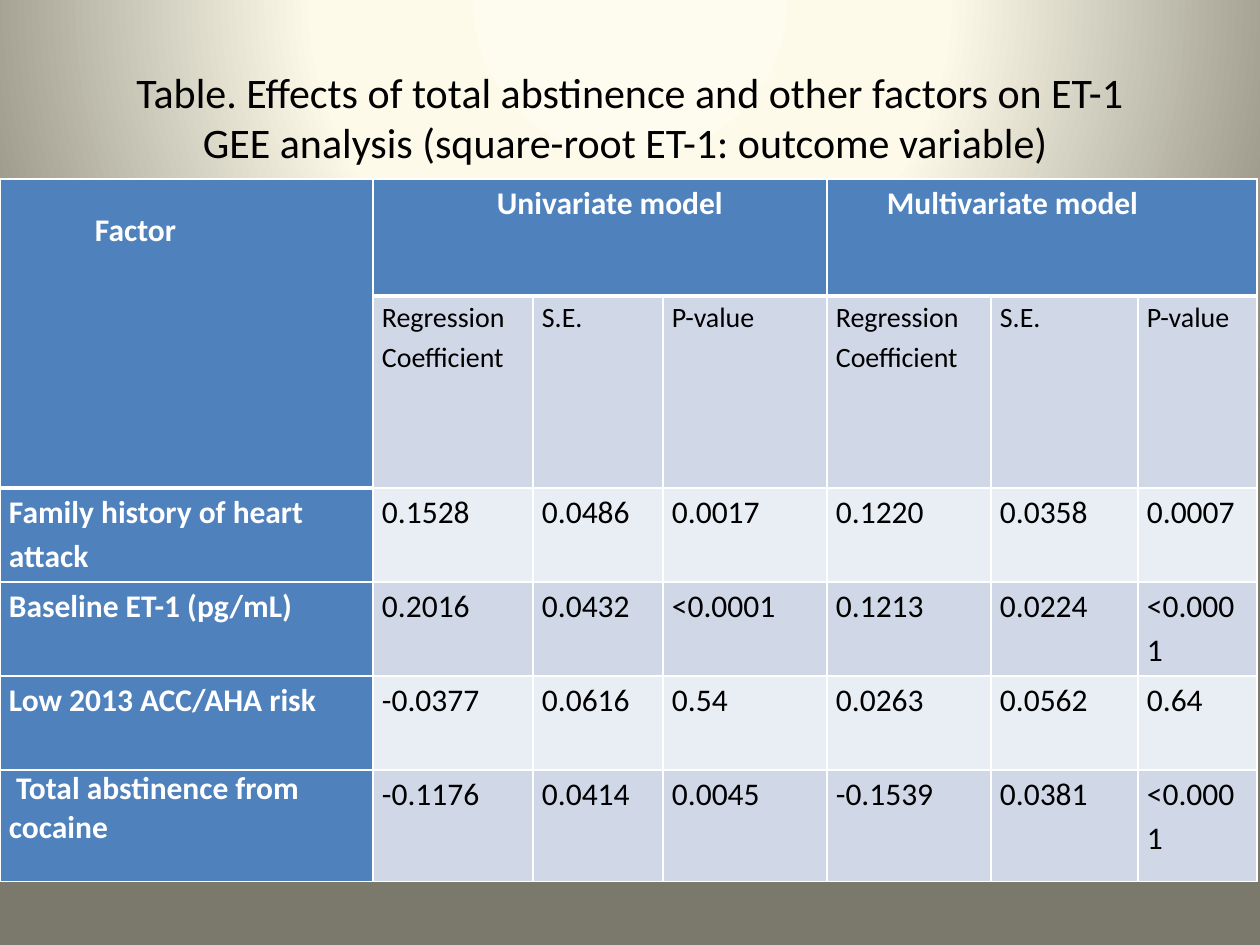
import pptx
import pptx.dml.color
import pptx.enum.text
import pptx.oxml
import pptx.oxml.ns
import pptx.util

RGBColor = pptx.dml.color.RGBColor
WHITE = RGBColor(0xFF, 0xFF, 0xFF)
BLACK = RGBColor(0x00, 0x00, 0x00)
HEADER_BLUE = RGBColor(0x4F, 0x81, 0xBD)
DARK_BAND = RGBColor(0xD0, 0xD8, 0xE8)
LIGHT_BAND = RGBColor(0xE9, 0xED, 0xF4)
GRADIENT = [(0, RGBColor(0xFE, 0xFC, 0xEE)), (40, RGBColor(0xFD, 0xFA, 0xEA)),
            (100, RGBColor(0x7B, 0x79, 0x6B))]

FONT = "Calibri"
PX_PER_INCH = 126
SLIDE_SIZE = (1260, 945)
TITLE_BOX = (63, 38, 1134, 157)
TABLE_LEFT, TABLE_TOP = 0, 179
COLUMN_WIDTHS = [373, 160, 130, 164, 164, 147, 119]
ROW_HEIGHTS = [117, 192, 94, 94, 94, 112]
CELL_MARGIN = 9

TITLE = ("Table. Effects of total abstinence and other factors on ET-1\v"
         "GEE analysis (square-root ET-1: outcome variable) ")
# text, first column, last row, last column, left margin, top margin
HEADERS = [
    ("Factor", 0, 1, 0, 95, 27),
    ("Univariate model", 1, 0, 3, 124, 0),
    ("Multivariate model", 4, 0, 6, 60, 0),
]
MEASURES = ["Regression Coefficient", "S.E.", "P-value",
            "Regression\nCoefficient", "S.E.", "P-value"]
FACTORS = [
    ("Family history of heart attack",
     "0.1528", "0.0486", "0.0017", "0.1220", "0.0358", "0.0007"),
    ("Baseline ET-1 (pg/mL)",
     "0.2016", "0.0432", "<0.0001", "0.1213", "0.0224", "<0.0001"),
    ("Low 2013 ACC/AHA risk",
     "-0.0377", "0.0616", "0.54", "0.0263", "0.0562", "0.64"),
    (" Total abstinence from cocaine",
     "-0.1176", "0.0414", "0.0045", "-0.1539", "0.0381", "<0.0001"),
]


def px(length):
    return pptx.util.Emu(round(length * 914400 / PX_PER_INCH))


def set_background(page):
    """Fill the page with a circular gradient centred above its middle."""
    stops = "".join(f'<a:gs pos="{place * 1000}"><a:srgbClr val="{color}"/></a:gs>'
                    for place, color in GRADIENT)
    page.element.cSld.insert(0, pptx.oxml.parse_xml(
        f'<p:bg {pptx.oxml.ns.nsdecls("p", "a")}><p:bgPr>'
        f'<a:gradFill rotWithShape="1"><a:gsLst>{stops}</a:gsLst><a:path path="circle">'
        '<a:fillToRect l="50000" t="-80000" r="50000" b="180000"/></a:path></a:gradFill>'
        '<a:effectLst/></p:bgPr></p:bg>'))


def add_title(page):
    box = page.shapes.add_textbox(*map(px, TITLE_BOX))
    frame = box.text_frame
    frame.word_wrap = True
    frame.vertical_anchor = pptx.enum.text.MSO_ANCHOR.MIDDLE
    frame.text = TITLE
    para = frame.paragraphs[0]
    para.alignment = pptx.enum.text.PP_ALIGN.CENTER
    para.font.name = FONT
    para.font.size = pptx.util.Pt(24)
    para.font.color.rgb = BLACK


def set_borders(cell, top, bottom):
    """Draw white borders; top and bottom are widths in points."""
    properties = cell._tc.get_or_add_tcPr()
    for side, width in (("L", 1), ("R", 1), ("T", top), ("B", bottom)):
        properties.append(pptx.oxml.parse_xml(
            f'<a:ln{side} {pptx.oxml.ns.nsdecls("a")} w="{width * 12700}">'
            f'<a:solidFill><a:srgbClr val="{WHITE}"/></a:solidFill></a:ln{side}>'))


def write_cell(cell, text, size, header, left=CELL_MARGIN, top=0, spacing=1.15):
    cell.margin_left, cell.margin_right = px(left), px(CELL_MARGIN)
    cell.margin_top, cell.margin_bottom = px(top), 0
    cell.text = text
    for para in cell.text_frame.paragraphs:
        para.line_spacing = spacing
        para.font.name = FONT
        para.font.size = pptx.util.Pt(size)
        para.font.bold = header
        para.font.color.rgb = WHITE if header else BLACK


def style_grid(table):
    for row in range(len(ROW_HEIGHTS)):
        band = LIGHT_BAND if row in (2, 4) else DARK_BAND
        for column in range(len(COLUMN_WIDTHS)):
            cell = table.cell(row, column)
            header_end = 1 if column == 0 else 0
            set_borders(cell, top=3 if row == header_end + 1 else 1,
                        bottom=3 if row == header_end or (row, column) == (0, 0) else 1)
            cell.fill.solid()
            cell.fill.fore_color.rgb = HEADER_BLUE if row == 0 or column == 0 else band


def add_results_table(page):
    table = page.shapes.add_table(
        len(ROW_HEIGHTS), len(COLUMN_WIDTHS), px(TABLE_LEFT), px(TABLE_TOP),
        px(sum(COLUMN_WIDTHS)), px(sum(ROW_HEIGHTS))).table
    for column, width in zip(table.columns, COLUMN_WIDTHS):
        column.width = px(width)
    for row, height in zip(table.rows, ROW_HEIGHTS):
        row.height = px(height)
    style_grid(table)

    for text, first, last_row, last, left, top in HEADERS:
        cell = table.cell(0, first)
        cell.merge(table.cell(last_row, last))
        write_cell(cell, text, 18, True, left, top)
    for column, measure in enumerate(MEASURES, start=1):
        write_cell(table.cell(1, column), measure, 16, False)
    for row, (factor, *values) in enumerate(FACTORS, start=2):
        spacing = 1.0 if row == len(ROW_HEIGHTS) - 1 else 1.15
        write_cell(table.cell(row, 0), factor, 18, True, spacing=spacing)
        for column, value in enumerate(values, start=1):
            write_cell(table.cell(row, column), value, 18, False)


def main():
    deck = pptx.Presentation()
    deck.slide_width, deck.slide_height = map(px, SLIDE_SIZE)
    page = deck.slides.add_slide(deck.slide_layouts[6])
    set_background(page)
    add_title(page)
    add_results_table(page)
    deck.save("out.pptx")


if __name__ == "__main__":
    main()
